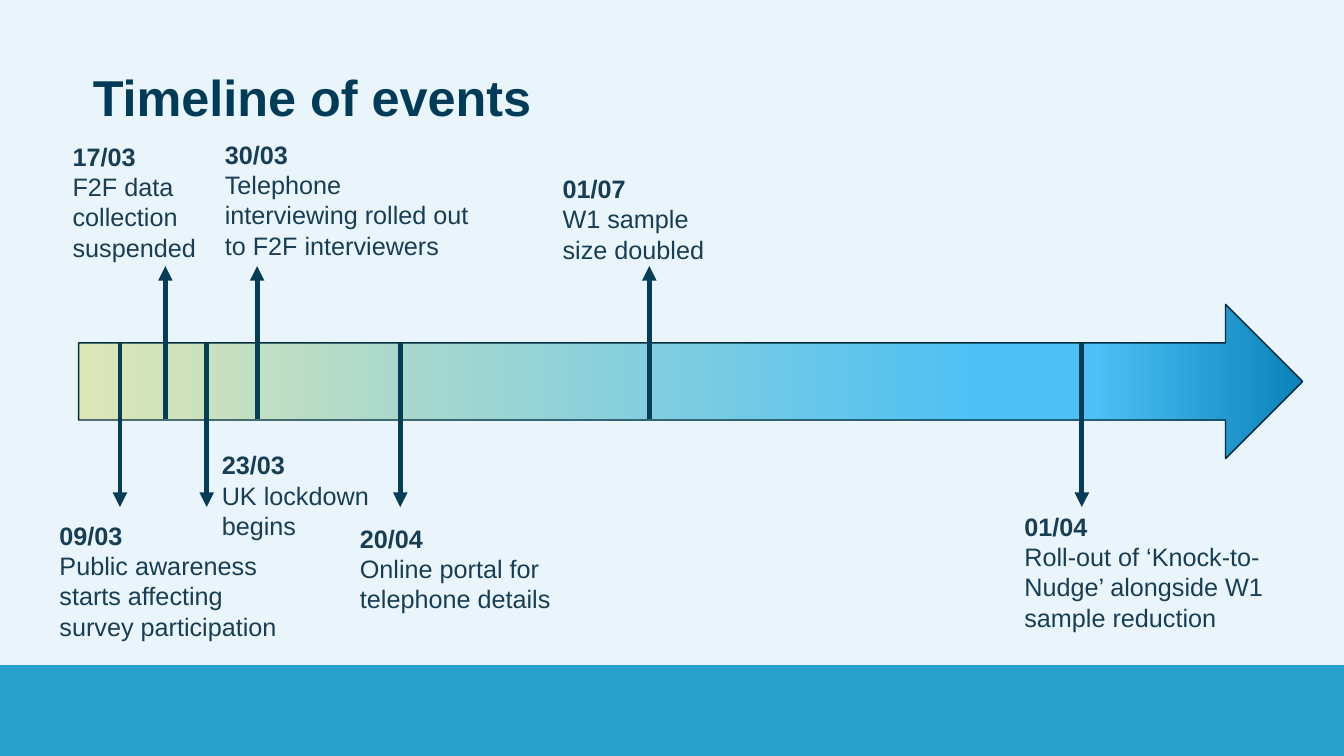
"""Build the timeline of survey events slide."""
from lxml import etree
from pptx import Presentation
from pptx.dml.color import RGBColor
from pptx.enum.shapes import MSO_CONNECTOR, MSO_SHAPE
from pptx.enum.text import MSO_ANCHOR, MSO_AUTO_SIZE, PP_ALIGN
from pptx.oxml.ns import qn
from pptx.util import Inches, Pt

STRAIGHT = MSO_CONNECTOR.STRAIGHT
RECTANGLE, RIGHT_ARROW = MSO_SHAPE.RECTANGLE, MSO_SHAPE.RIGHT_ARROW
TOP, BOTTOM = MSO_ANCHOR.TOP, MSO_ANCHOR.BOTTOM
GROW = MSO_AUTO_SIZE.SHAPE_TO_FIT_TEXT
LEFT = PP_ALIGN.LEFT

GRADIENT = [(0, "DDE6B6"), (74, "4DC0F5"), (83, "4DC0F5"), (100, "0B82BA")]
BAR_TOP, BAR_BOTTOM = 3.4, 4.16
ARROW_LENGTH = 1.63
UP_TIP = 2.64

# date, description, arrow x, arrow points up, text box left, top, width, height
EVENTS = [
    ("09/03", "Public awareness starts affecting survey participation",
     1.19, False, 0.59, 5.1, 2.34, 1.31),
    ("17/03", "F2F data collection suspended",
     1.64, True, 0.72, 1.34, 1.33, 1.31),
    ("23/03", "UK lockdown begins",
     2.05, False, 2.2, 4.4, 1.82, 1.01),
    ("30/03", "Telephone interviewing rolled out to F2F interviewers",
     2.55, True, 2.23, 1.32, 2.62, 1.31),
    ("20/04", "Online portal for telephone details",
     3.97, False, 3.57, 5.13, 2.17, 1.01),
    ("01/07", "W1 sample size doubled",
     6.44, True, 5.58, 1.66, 1.58, 1.01),
    ("01/04", "Roll-out of ‘Knock-to-Nudge’ alongside W1 sample reduction",
     10.73, False, 10.16, 5.01, 2.49, 1.31),
]


def rgb(value):
    return RGBColor.from_string(value)


prs = Presentation()
prs.slide_width, prs.slide_height = Inches(13.33), Inches(7.5)
s = prs.slides.add_slide(prs.slide_layouts[5])
s.background.fill.solid()
s.background.fill.fore_color.rgb = rgb("E9F5FA")

title = s.shapes.title
title.left, title.top = Inches(0.92), Inches(0.7)
title.width, title.height = Inches(11.5), Inches(0.58)
tf = title.text_frame
tf.margin_left = tf.margin_right = tf.margin_top = tf.margin_bottom = 0
tf.vertical_anchor = TOP
tf.auto_size = GROW
tf.text = "Timeline of events"
p = tf.paragraphs[0]
p.alignment = LEFT
p.line_spacing = 0.95
p.font.name, p.font.size, p.font.bold = "Arial", Pt(36), True
p.font.color.rgb = rgb("003C57")

band = s.shapes.add_shape(RECTANGLE, 0, Inches(6.6), prs.slide_width, Inches(0.9))
band.shadow.inherit = False
band.fill.solid()
band.fill.fore_color.rgb = rgb("27A0CC")
band.line.fill.background()

timeline = s.shapes.add_shape(
    RIGHT_ARROW, Inches(0.78), Inches(3.02), Inches(12.14), Inches(1.53))
timeline.shadow.inherit = False
timeline.line.color.rgb = rgb("042D40")
timeline.line.width = Pt(1)
timeline.fill.gradient()
timeline.fill.gradient_angle = 0
stops = timeline._element.spPr.find(qn("a:gradFill")).find(qn("a:gsLst"))
for stop in list(stops):
    stops.remove(stop)
for percent, color in GRADIENT:
    stop = etree.SubElement(stops, qn("a:gs"), pos=str(percent * 1000))
    etree.SubElement(stop, qn("a:srgbClr"), val=color)

for date, description, x, up, left, top, width, height in EVENTS:
    group = s.shapes.add_group_shape()
    start = BAR_BOTTOM if up else BAR_TOP
    tip = UP_TIP if up else BAR_TOP + ARROW_LENGTH
    arrow = group.shapes.add_connector(
        STRAIGHT, Inches(x), Inches(start), Inches(x), Inches(tip))
    arrow.line.color.rgb = rgb("053D57")
    arrow.line.width = Pt(3.5)
    etree.SubElement(arrow.line._get_or_add_ln(), qn("a:tailEnd"), type="triangle")
    etree.SubElement(arrow._element.spPr, qn("a:effectLst"))

    box = group.shapes.add_textbox(
        Inches(left), Inches(top), Inches(width), Inches(height))
    tf = box.text_frame
    tf.word_wrap = True
    tf.auto_size = GROW
    tf.vertical_anchor = BOTTOM
    tf.margin_left = 0
    p = tf.paragraphs[0]
    p.font.name, p.font.size = "Arial", Pt(18)
    p.font.color.rgb = rgb("183E56")
    r = p.add_run()
    r.text = date
    r.font.bold = True
    p.add_line_break()
    r = p.add_run()
    r.text = description

prs.save("out.pptx")
